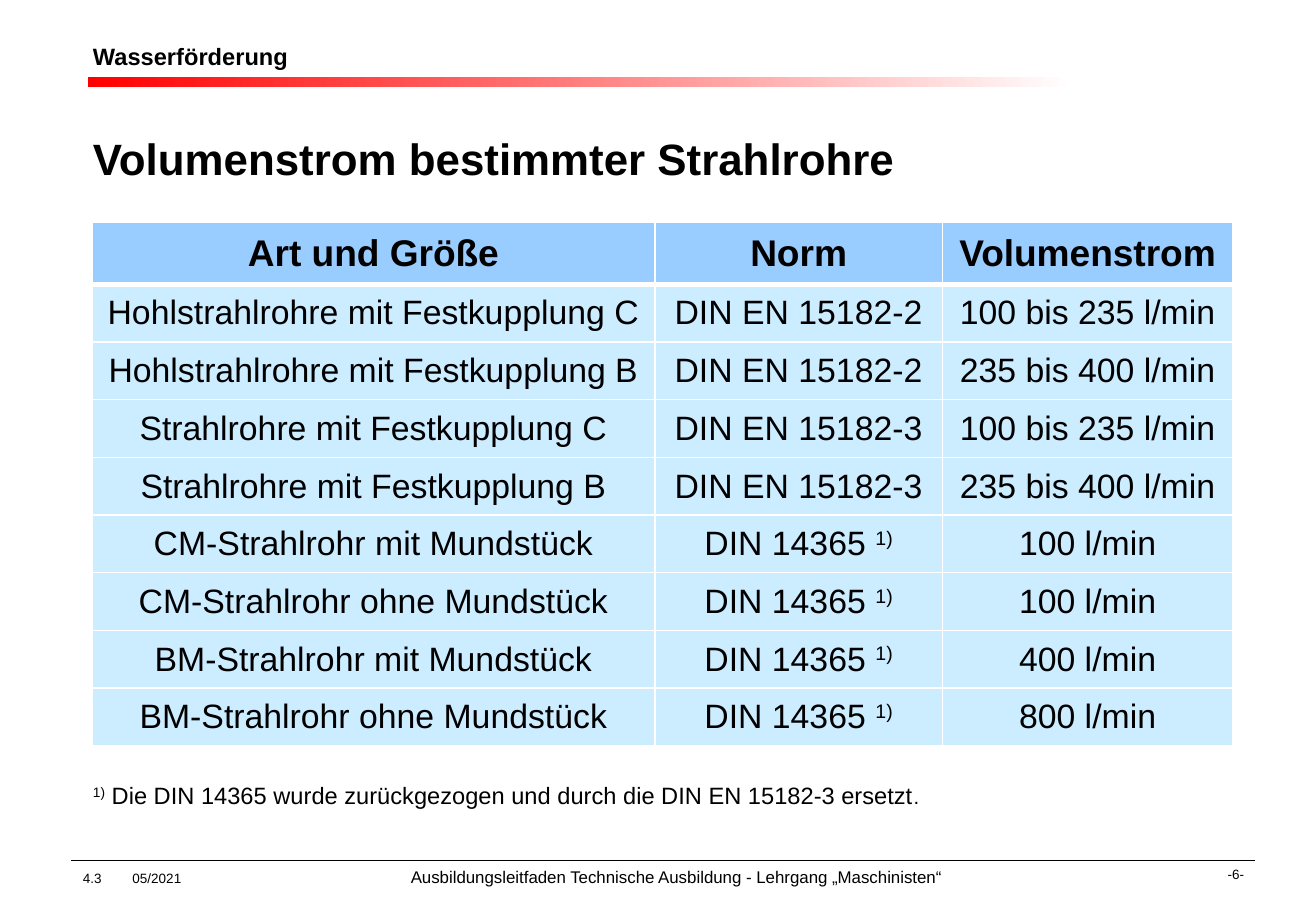
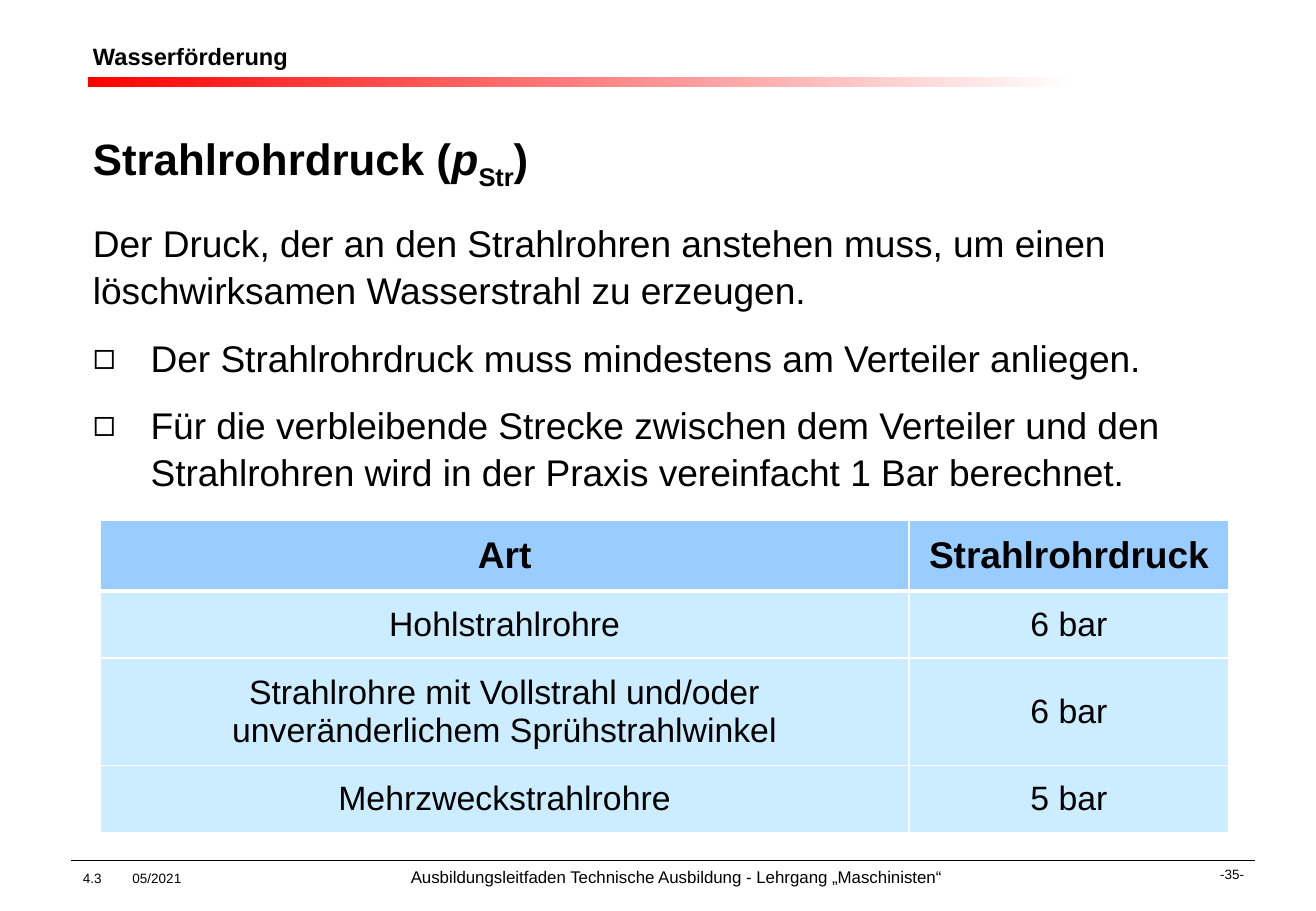
from lxml import etree
from pptx import Presentation
from pptx import util as u
from pptx.dml.color import RGBColor
from pptx.enum import shapes, text
from pptx.oxml.ns import qn

# Grid: square units, twelve to the inch
COLUMNS, ROWS = 130, 90
UNIT = u.Inches(1) / 12
LEFT = 8
CONTENT_WIDTH = 113.8
CELL_MARGIN = 1.2

FONT = "Arial"
BLACK, WHITE, RED = "000000", "FFFFFF", "FF0000"
HEADER_BLUE, ROW_BLUE = "99CCFF", "CCECFF"
CENTER, RIGHT = text.PP_ALIGN.CENTER, text.PP_ALIGN.RIGHT
MIDDLE = text.MSO_ANCHOR.MIDDLE

CHAPTER = "Wasserförderung"
FOOTER = [("4.3\t05/2021\t", {}),
          ("Ausbildungsleitfaden Technische Ausbildung - Lehrgang „Maschinisten“", {"size": 10})]
FOOTER_TABS = (4.9, 32.4)

WITHDRAWN_NORM = [("DIN 14365 ", {}), ("1)", {"baseline": 30})]
NOZZLE_FLOWS = [
    ("Art und Größe", "Norm", "Volumenstrom"),
    ("Hohlstrahlrohre mit Festkupplung C", "DIN EN 15182-2", "100 bis 235 l/min"),
    ("Hohlstrahlrohre mit Festkupplung B", "DIN EN 15182-2", "235 bis 400 l/min"),
    ("Strahlrohre mit Festkupplung C", "DIN EN 15182-3", "100 bis 235 l/min"),
    ("Strahlrohre mit Festkupplung B", "DIN EN 15182-3", "235 bis 400 l/min"),
    ("CM-Strahlrohr mit Mundstück", WITHDRAWN_NORM, "100 l/min"),
    ("CM-Strahlrohr ohne Mundstück", WITHDRAWN_NORM, "100 l/min"),
    ("BM-Strahlrohr mit Mundstück", WITHDRAWN_NORM, "400 l/min"),
    ("BM-Strahlrohr ohne Mundstück", WITHDRAWN_NORM, "800 l/min"),
]
FOOTNOTE = [("1)", {"baseline": 30}),
            (" Die DIN 14365 wurde zurückgezogen und durch die DIN EN 15182-3 ersetzt", {}),
            (".", {"size": 12})]

PRESSURE_TITLE = [("Strahlrohrdruck (", {}), ("p", {"italic": True}),
                  ("Str", {"baseline": -25}), (")", {})]
PRESSURE_TEXT = [
    ("Der Druck, der an den Strahlrohren anstehen muss, um einen "
     "löschwirksamen Wasserstrahl zu erzeugen.", False),
    ("Der Strahlrohrdruck muss mindestens am Verteiler anliegen.", True),
    ("Für die verbleibende Strecke zwischen dem Verteiler und den "
     "Strahlrohren wird in der Praxis vereinfacht 1 Bar berechnet.", True),
]
NOZZLE_PRESSURES = [
    ("Art", "Strahlrohrdruck"),
    ("Hohlstrahlrohre", "6 bar"),
    ("Strahlrohre mit Vollstrahl und/oder unveränderlichem Sprühstrahlwinkel", "6 bar"),
    ("Mehrzweckstrahlrohre", "5 bar"),
]


def grid(units):
    return u.Emu(round(units * UNIT))


def color(hex_string):
    return RGBColor.from_string(hex_string)


def write(paragraph, content, size, bold=False, align=None):
    """Fill a paragraph with a string or a list of (string, options)."""
    pieces = [(content, {})] if isinstance(content, str) else content
    paragraph.alignment = align
    for string, options in pieces:
        run = paragraph.add_run()
        run.text = string
        run.font.name = FONT
        run.font.size = u.Pt(options.get("size", size))
        run.font.bold = bold
        run.font.italic = options.get("italic", False)
        run.font.color.rgb = color(BLACK)
        if "baseline" in options:
            run._r.get_or_add_rPr().set("baseline", str(options["baseline"] * 1000))


def add_text(slide, box, content=None, size=14, bold=False, align=None, anchor=None):
    shape = slide.shapes.add_textbox(*map(grid, box))
    frame = shape.text_frame
    frame.word_wrap = True
    frame.vertical_anchor = anchor
    if content:
        write(frame.paragraphs[0], content, size, bold, align)
    return frame


def add_bullet(paragraph, indent):
    properties = paragraph._p.get_or_add_pPr()
    properties.set("marL", str(grid(indent)))
    properties.set("indent", str(-grid(indent)))
    etree.SubElement(properties, qn("a:buFont")).set("typeface", FONT)
    etree.SubElement(properties, qn("a:buChar")).set("char", "◻")


def add_tabs(paragraph, stops):
    tabs = etree.SubElement(paragraph._p.get_or_add_pPr(), qn("a:tabLst"))
    for stop in stops:
        etree.SubElement(tabs, qn("a:tab"), pos=str(grid(stop)), algn="l")


def add_header(slide, box):
    """Chapter name above a band fading from red to white."""
    left, top, width, height = box
    add_text(slide, (left, top, 63, height), CHAPTER, 14, bold=True, anchor=MIDDLE)
    band = slide.shapes.add_shape(
        shapes.MSO_SHAPE.RECTANGLE,
        *map(grid, (left + 0.7, top + 4.6, width, 1)))
    band.shadow.inherit = False
    band.line.fill.background()
    band.fill.gradient()
    band.fill.gradient_angle = 0
    for stop, position, shade in zip(band.fill.gradient_stops, (0, 1), (RED, WHITE)):
        stop.position = position
        stop.color.rgb = color(shade)


def add_footer(slide, box, number):
    """Rule with edition, course name and page number below it."""
    left, top, width, height = box
    rule = slide.shapes.add_connector(
        shapes.MSO_CONNECTOR.STRAIGHT,
        *map(grid, (left, top, left + width, top)))
    rule.line.color.rgb = color(BLACK)
    rule.line.width = u.Pt(0.75)
    etree.SubElement(rule._element.spPr, qn("a:effectLst"))
    frame = add_text(slide, (left, top, 87.6, height))
    add_tabs(frame.paragraphs[0], FOOTER_TABS)
    write(frame.paragraphs[0], FOOTER, 8)
    add_text(slide, (left + width - 27, top, 27.1, height), f"-{number}-", 8, align=RIGHT)


def set_borders(cell, bottom):
    properties = cell._tc.get_or_add_tcPr()
    widths = {"lnL": 1, "lnR": 1, "lnT": 1, "lnB": bottom}
    for index, (side, width) in enumerate(widths.items()):
        line = etree.Element(qn("a:" + side), w=str(u.Pt(width)))
        fill = etree.SubElement(line, qn("a:solidFill"))
        etree.SubElement(fill, qn("a:srgbClr"), val=WHITE)
        properties.insert(index, line)


def add_data_table(slide, corner, widths, heights, data, padding):
    """Centred table with a bold header row and white rules."""
    left, top = corner
    table = slide.shapes.add_table(
        len(data), len(widths),
        *map(grid, (left, top, sum(widths), sum(heights)))).table
    table.horz_banding = False
    for column, width in zip(table.columns, widths):
        column.width = grid(width)
    for index, (row, height, values) in enumerate(zip(table.rows, heights, data)):
        header = index == 0
        row.height = grid(height)
        for cell, value in zip(row.cells, values):
            cell.fill.solid()
            cell.fill.fore_color.rgb = color(HEADER_BLUE if header else ROW_BLUE)
            set_borders(cell, 3 if header else 1)
            cell.vertical_anchor = MIDDLE
            cell.margin_left = cell.margin_right = grid(CELL_MARGIN)
            cell.margin_top = cell.margin_bottom = grid(padding)
            write(cell.text_frame.paragraphs[0], value, 22 if header else 20, header, CENTER)


def add_base_slide(presentation, title, number):
    slide = presentation.slides.add_slide(presentation.slide_layouts[6])
    add_header(slide, (LEFT, 3, 97.4, 5))
    add_text(slide, (LEFT, 12.4, CONTENT_WIDTH, 7), title, 26, bold=True)
    add_footer(slide, (7, 85, 117, 2.8), number)
    return slide


def add_flow_slide(presentation):
    slide = add_base_slide(presentation, "Volumenstrom bestimmter Strahlrohre", 6)
    heights = [6] + [5.62] * (len(NOZZLE_FLOWS) - 1)
    add_data_table(slide, (9.1, 22), (55.6, 28.4, 28.7), heights, NOZZLE_FLOWS, 0.85)
    add_text(slide, (LEFT, 76.6, CONTENT_WIDTH, 4), FOOTNOTE, 14)


def add_pressure_slide(presentation):
    slide = add_base_slide(presentation, PRESSURE_TITLE, 35)
    # Definition and rules of thumb
    frame = add_text(slide, (LEFT, 20.9, 112.6, 28.4))
    for index, (content, bulleted) in enumerate(PRESSURE_TEXT):
        paragraph = frame.add_paragraph() if index else frame.paragraphs[0]
        paragraph.line_spacing = u.Pt(28)
        paragraph.space_after = u.Pt(12)
        if bulleted:
            add_bullet(paragraph, 5.7)
        write(paragraph, content, 22)
    add_data_table(slide, (9.9, 51.4), (79.9, 31.6), (6.9, 6.55, 10.3, 6.55),
                   NOZZLE_PRESSURES, 1.3)


def main():
    presentation = Presentation()
    presentation.slide_width = grid(COLUMNS)
    presentation.slide_height = grid(ROWS)
    add_flow_slide(presentation)
    add_pressure_slide(presentation)
    presentation.save("out.pptx")


if __name__ == "__main__":
    main()
